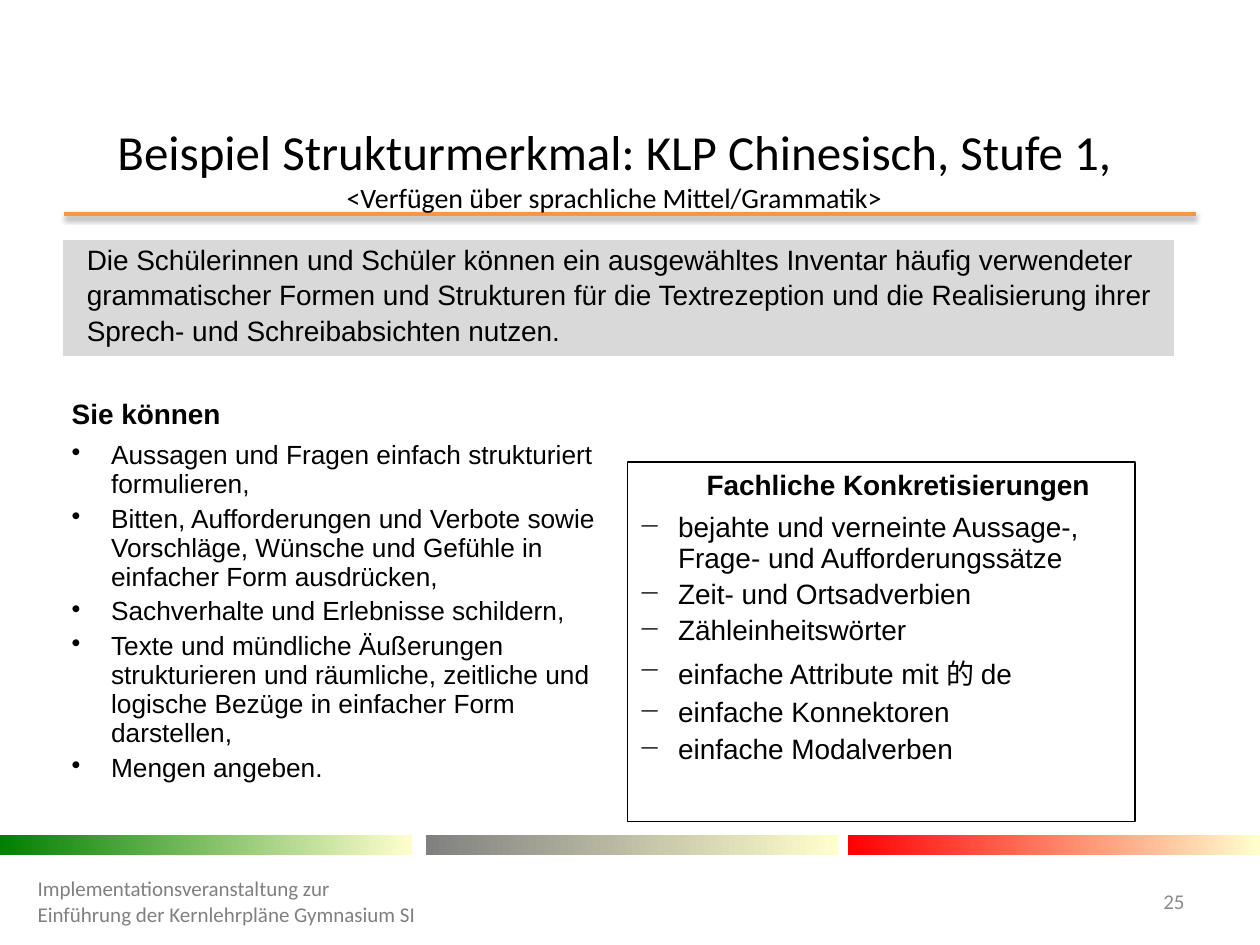
import pptx
import pptx.dml.color
import pptx.enum.shapes
import pptx.enum.text
import pptx.oxml
import pptx.oxml.ns
import pptx.util
from pptx.util import Pt

ALIGN = pptx.enum.text.PP_ALIGN
MIDDLE = pptx.enum.text.MSO_ANCHOR.MIDDLE
RECTANGLE = pptx.enum.shapes.MSO_SHAPE.RECTANGLE

TITLE = "Beispiel Strukturmerkmal: KLP Chinesisch, Stufe 1,"
SUBTITLE = "<Verfügen über sprachliche Mittel/Grammatik>"
COMPETENCE = (
    "Die Schülerinnen und Schüler können ein ausgewähltes Inventar häufig "
    "verwendeter grammatischer Formen und Strukturen für die Textrezeption und "
    "die Realisierung ihrer Sprech- und Schreibabsichten nutzen."
)
SKILLS_HEADING = "Sie können"
SKILLS = [
    "Aussagen und Fragen einfach strukturiert formulieren,",
    "Bitten, Aufforderungen und Verbote sowie Vorschläge, Wünsche und Gefühle "
    "in einfacher Form ausdrücken,",
    "Sachverhalte und Erlebnisse schildern,",
    "Texte und mündliche Äußerungen strukturieren und räumliche, zeitliche und "
    "logische Bezüge in einfacher Form darstellen,",
    "Mengen angeben.",
]
DETAILS_HEADING = "Fachliche Konkretisierungen"
DETAILS = [
    "bejahte und verneinte Aussage-, Frage- und Aufforderungssätze",
    "Zeit- und Ortsadverbien",
    "Zähleinheitswörter",
    "einfache Attribute mit 的 de",
    "einfache Konnektoren",
    "einfache Modalverben",
]
FOOTER = "Implementationsveranstaltung zur Einführung der Kernlehrpläne Gymnasium SI"
PAGE = "25"

THEME = {
    "heading_font": "Calibri", "body_font": "Arial",
    "title": 28, "subtitle": 16, "body": 16, "skills": 15, "footer": 12,
    "text": "000000", "muted": "808080", "page": "8C8C8C",
    "rule": "F79646", "band": "D9D9D9", "white": "FFFFFF",
    "bar_starts": ["008000", "808080", "FF0000"], "bar_end": "FFFFCC",
}
BAR_LEFTS = [0, 243.5, 484.5]
COLUMN_WIDTHS = [324, 311]
ROW_HEIGHTS = [62, 22, 264]
NO_TABLE_STYLE = "{2D5ABB26-0587-4C30-8999-92F81FD0307C}"


def rgb(value):
    return pptx.dml.color.RGBColor.from_string(value)


def write(paragraph, text, size=THEME["body"], font=THEME["body_font"],
          color=THEME["text"], bold=False, align=ALIGN.LEFT, spacing=None,
          after=0, indent=0, bullet=None):
    """Add a formatted run; a bullet hangs inside the indent."""
    properties = paragraph._p.get_or_add_pPr()
    properties.set("marL", str(Pt(indent)))
    properties.set("indent", str(-Pt(indent) if bullet else 0))
    paragraph.alignment = align
    paragraph.space_after = Pt(after)
    if spacing:
        paragraph.line_spacing = spacing
    if bullet:
        mark = pptx.oxml.parse_xml(
            f'<a:buChar {pptx.oxml.ns.nsdecls("a")} char="{bullet}"/>')
        properties.append(mark)
    run = paragraph.add_run()
    run.text = text
    run.font.size = Pt(size)
    run.font.name = font
    run.font.bold = bold
    run.font.color.rgb = rgb(color)


def add_text_box(slide, left, top, width, height):
    """Return the first paragraph of a wrapped, vertically centred box."""
    frame = slide.shapes.add_textbox(Pt(left), Pt(top), Pt(width), Pt(height)).text_frame
    frame.word_wrap = True
    frame.vertical_anchor = MIDDLE
    return frame.paragraphs[0]


def add_rectangle(slide, left, top, width, height):
    shape = slide.shapes.add_shape(RECTANGLE, Pt(left), Pt(top), Pt(width), Pt(height))
    shape.shadow.inherit = False
    return shape


def add_rule(slide):
    rule = slide.shapes.add_connector(
        pptx.enum.shapes.MSO_CONNECTOR.STRAIGHT, Pt(36.7), Pt(122.4), Pt(683.3), Pt(122.4))
    rule.line.color.rgb = rgb(THEME["rule"])
    rule.line.width = Pt(2)
    rule._element.spPr.append(pptx.oxml.parse_xml(
        f'<a:effectLst {pptx.oxml.ns.nsdecls("a")}>'
        f'<a:outerShdw blurRad="{Pt(3.1)}" dist="{Pt(1.6)}" dir="5400000" rotWithShape="0">'
        '<a:srgbClr val="000000"><a:alpha val="38000"/></a:srgbClr>'
        '</a:outerShdw></a:effectLst>'))


def add_bars(slide):
    for left, start in zip(BAR_LEFTS, THEME["bar_starts"]):
        bar = add_rectangle(slide, left, 477.2, 235.5, 11.5)
        bar.line.fill.background()
        bar.fill.gradient()
        bar.fill.gradient_angle = 0
        for stop, color in zip(bar.fill.gradient_stops, (start, THEME["bar_end"])):
            stop.color.rgb = rgb(color)


def fill_list(cell, heading, items, bullet, size, align):
    frame = cell.text_frame
    write(frame.paragraphs[0], heading, bold=True, align=align, spacing=1.15, after=6)
    for item in items:
        write(frame.add_paragraph(), item, size=size, after=3, indent=22.5, bullet=bullet)


def add_competence_table(slide):
    frame = slide.shapes.add_table(
        len(ROW_HEIGHTS), len(COLUMN_WIDTHS), Pt(36), Pt(137.3),
        Pt(sum(COLUMN_WIDTHS)), Pt(sum(ROW_HEIGHTS)))
    table = frame.table
    table.first_row = table.horz_banding = False
    table._tbl.tblPr.find(pptx.oxml.ns.qn("a:tableStyleId")).text = NO_TABLE_STYLE
    for column, width in zip(table.columns, COLUMN_WIDTHS):
        column.width = Pt(width)
    for row, height in zip(table.rows, ROW_HEIGHTS):
        row.height = Pt(height)
    for cell in table.iter_cells():
        cell.margin_left = cell.margin_right = Pt(5)
        cell.margin_top = cell.margin_bottom = 0
        cell.fill.background()

    for row, color in enumerate((THEME["band"], THEME["white"])):
        merged = table.cell(row, 0)
        merged.merge(table.cell(row, 1))
        merged.fill.solid()
        merged.fill.fore_color.rgb = rgb(color)

    write(table.cell(0, 0).text_frame.paragraphs[0], COMPETENCE, spacing=1.15, indent=8.6)
    skills, details = table.cell(2, 0), table.cell(2, 1)
    details.margin_top = Pt(40.6)
    details.margin_right = Pt(9.4)
    fill_list(skills, SKILLS_HEADING, SKILLS, "•", THEME["skills"], ALIGN.LEFT)
    fill_list(details, DETAILS_HEADING, DETAILS, "−", THEME["body"], ALIGN.CENTER)


def main():
    deck = pptx.Presentation()
    deck.slide_width, deck.slide_height = Pt(720), Pt(540)
    slide = deck.slides.add_slide(deck.slide_layouts[6])
    heading_font = THEME["heading_font"]

    add_rule(slide)
    add_bars(slide)

    title = add_text_box(slide, 27, 72.7, 648, 46)
    write(title, TITLE, size=THEME["title"], font=heading_font, align=ALIGN.CENTER)
    title.add_line_break()
    write(title, SUBTITLE, size=THEME["subtitle"], font=heading_font, align=ALIGN.CENTER)

    write(add_text_box(slide, 638, 500.5, 46, 28.8), PAGE, size=THEME["footer"],
          font=heading_font, color=THEME["page"], align=ALIGN.RIGHT)
    add_competence_table(slide)
    write(add_text_box(slide, 14.4, 500.5, 233.3, 28.8), FOOTER, size=THEME["footer"],
          font=heading_font, color=THEME["muted"])

    details_frame = add_rectangle(slide, 358.6, 264.2, 290.2, 205.2)
    details_frame.fill.background()
    details_frame.line.color.rgb = rgb(THEME["text"])
    details_frame.line.width = Pt(1)

    deck.save("out.pptx")


if __name__ == "__main__":
    main()
